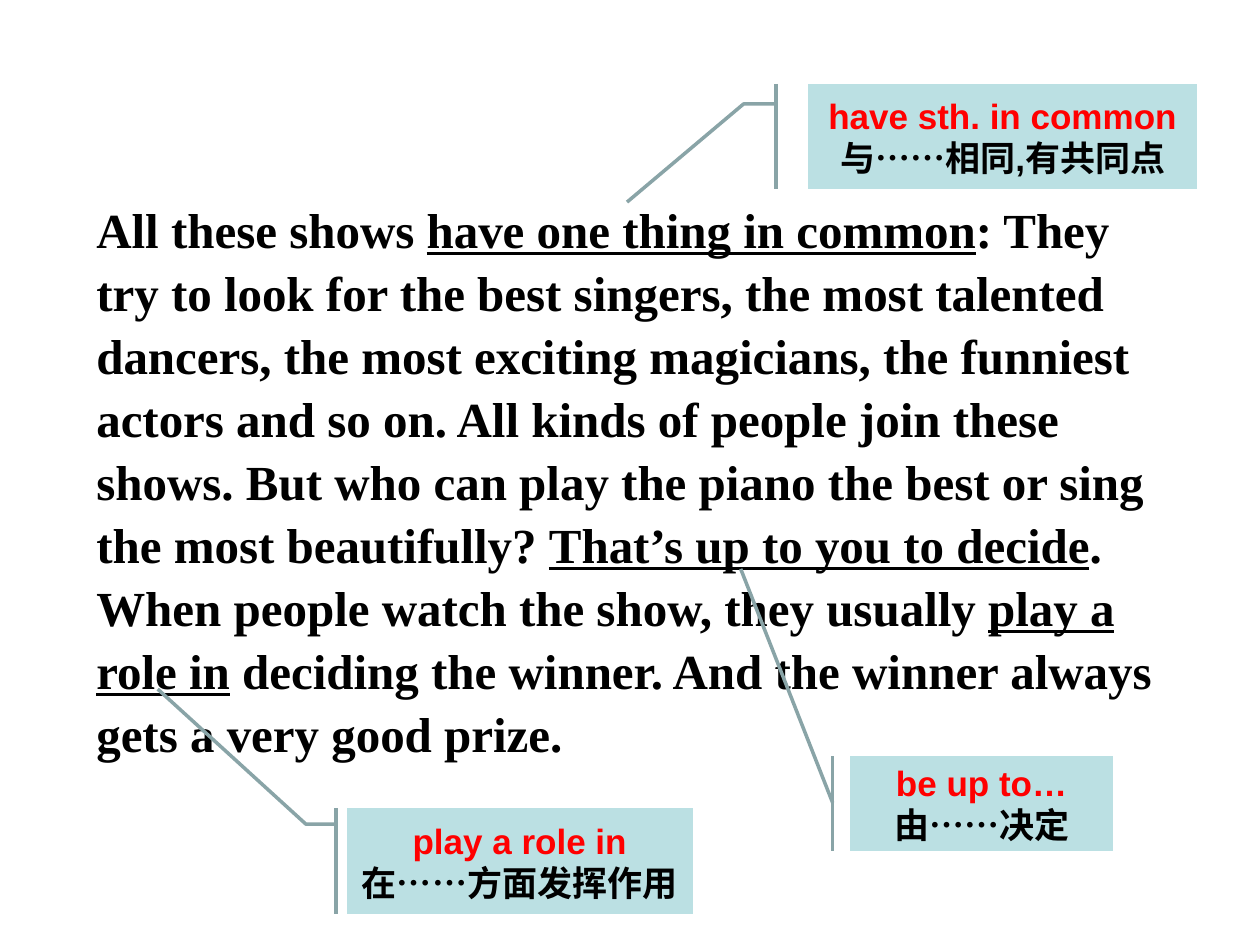
from dataclasses import dataclass

from lxml import etree
from pptx import Presentation
from pptx.dml.color import RGBColor
from pptx.enum.shapes import MSO_SHAPE
from pptx.enum.text import MSO_ANCHOR, PP_ALIGN
from pptx.oxml.ns import qn
from pptx.util import Pt

STRAIGHT_CALLOUT = MSO_SHAPE.LINE_CALLOUT_1_ACCENT_BAR
BENT_CALLOUT = MSO_SHAPE.LINE_CALLOUT_2_ACCENT_BAR
MIDDLE = MSO_ANCHOR.MIDDLE
CENTER = PP_ALIGN.CENTER
ELLIPSIS = "……"


@dataclass(frozen=True)
class Theme:
    ink: RGBColor = RGBColor(0, 0, 0)
    phrase: RGBColor = RGBColor(0xFF, 0, 0)
    callout_fill: RGBColor = RGBColor(0xBB, 0xE0, 0xE3)
    callout_line: RGBColor = RGBColor(0x89, 0xA4, 0xA7)
    passage_font: str = "Times New Roman"
    callout_font: str = "Arial"
    chinese_font: str = "Noto Sans CJK SC"
    passage_size: int = 28
    callout_size: int = 20
    line_spacing: int = 36


@dataclass(frozen=True)
class Callout:
    kind: MSO_SHAPE
    left: float
    top: float
    width: float
    height: float
    leader: tuple[float, ...]  # y, x pairs as fractions of the box
    phrase: str
    meaning: tuple[str, str]  # words before and after the ellipsis


THEME = Theme()

# Each paragraph alternates plain and underlined text, starting with plain.
PASSAGE = (
    ("All these shows ", "have one thing in common", ": They"),
    (
        "try to look for the best singers, the most talented dancers, "
        "the most exciting magicians, the funniest actors and so on. "
        "All kinds of people join these shows. But who can play the piano "
        "the best or sing the most beautifully? ",
        "That’s up to you to decide",
        ". When people watch the show, they usually ",
        "play a role in",
        " deciding the winner. And the winner always gets a very good prize.",
    ),
)

CALLOUTS = (
    Callout(BENT_CALLOUT, 462, 48, 222, 60,
            (0.19, -0.083, 0.19, -0.167, 1.125, -0.467),
            "have sth. in common", ("与", "相同,有共同点")),
    Callout(STRAIGHT_CALLOUT, 486, 432, 150, 54,
            (0.495, -0.068, -1.98, -0.418),
            "be up to…", ("由", "决定")),
    Callout(BENT_CALLOUT, 198, 462, 198, 60,
            (0.15, -0.03, 0.15, -0.117, -1.137, -0.545),
            "play a role in", ("在", "方面发挥作用")),
)


def style_font(font, name: str, size: int, color: RGBColor) -> None:
    font.name = name
    font.size = Pt(size)
    font.bold = True
    font.color.rgb = color


def add_chinese_span(para, text: str, latin_font: str) -> None:
    """Add a run whose East Asian face is set beside its Latin one."""
    span = para.add_run()
    span.text = text
    span.font.name = latin_font
    east_asian = etree.SubElement(span.font._element, qn("a:ea"))
    east_asian.set("typeface", THEME.chinese_font)


def add_passage(slide) -> None:
    box = slide.shapes.add_textbox(Pt(48), Pt(108), Pt(642), Pt(332))
    frame = box.text_frame
    frame.word_wrap = True
    for number, pieces in enumerate(PASSAGE):
        para = frame.add_paragraph() if number else frame.paragraphs[0]
        para.line_spacing = Pt(THEME.line_spacing)
        style_font(para.font, THEME.passage_font, THEME.passage_size, THEME.ink)
        for position, text in enumerate(pieces):
            span = para.add_run()
            span.text = text
            if position % 2:
                span.font.underline = True


def add_callout(slide, callout: Callout) -> None:
    shape = slide.shapes.add_shape(
        callout.kind, Pt(callout.left), Pt(callout.top),
        Pt(callout.width), Pt(callout.height))
    for index, value in enumerate(callout.leader):
        shape.adjustments[index] = value
    shape.shadow.inherit = False
    shape.fill.solid()
    shape.fill.fore_color.rgb = THEME.callout_fill
    shape.line.color.rgb = THEME.callout_line
    shape.line.width = Pt(2)

    frame = shape.text_frame
    frame.word_wrap = True
    frame.vertical_anchor = MIDDLE
    phrase, meaning = frame.paragraphs[0], frame.add_paragraph()
    for para, color in ((phrase, THEME.phrase), (meaning, THEME.ink)):
        para.alignment = CENTER
        style_font(para.font, THEME.callout_font, THEME.callout_size, color)
    phrase.add_run().text = callout.phrase
    before, after = callout.meaning
    add_chinese_span(meaning, before, THEME.callout_font)
    add_chinese_span(meaning, ELLIPSIS, THEME.chinese_font)
    add_chinese_span(meaning, after, THEME.callout_font)


def main() -> None:
    deck = Presentation()
    deck.slide_width, deck.slide_height = Pt(720), Pt(540)
    page = deck.slides.add_slide(deck.slide_layouts[6])
    add_passage(page)
    for callout in CALLOUTS:
        add_callout(page, callout)
    deck.save("out.pptx")


if __name__ == "__main__":
    main()
